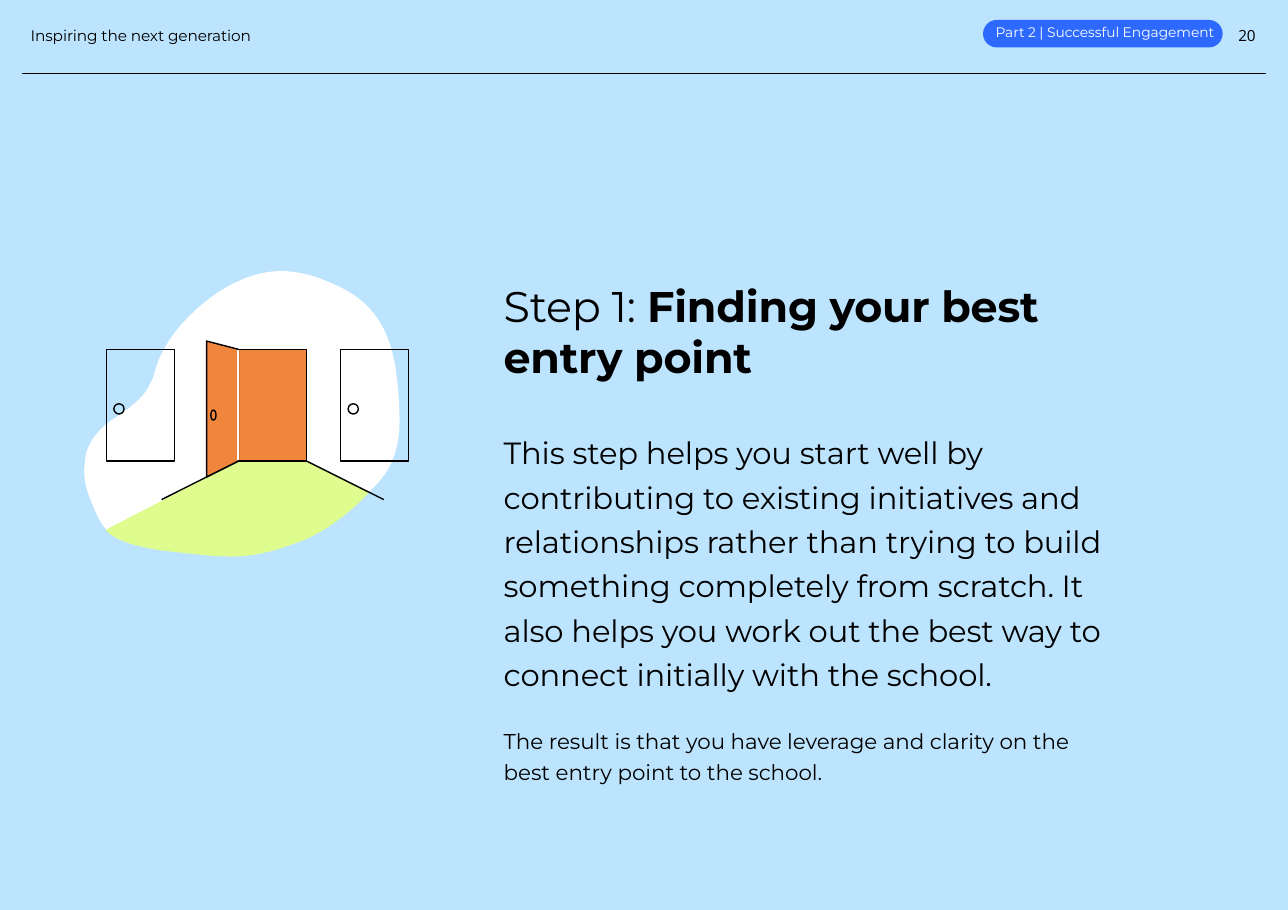
from lxml import etree
from pptx import Presentation
from pptx.dml.color import RGBColor
from pptx.enum.shapes import MSO_CONNECTOR, MSO_SHAPE
from pptx.oxml.ns import qn
from pptx.util import Pt

STRAIGHT = MSO_CONNECTOR.STRAIGHT
RECT, OVAL, PILL = MSO_SHAPE.RECTANGLE, MSO_SHAPE.OVAL, MSO_SHAPE.ROUNDED_RECTANGLE

SKY = RGBColor(0xBC, 0xE4, 0xFE)
WHITE = RGBColor(0xFF, 0xFF, 0xFF)
LIME = RGBColor(0xDF, 0xFC, 0x8E)
ORANGE = RGBColor(0xEF, 0x86, 0x3B)
BLUE = RGBColor(0x2D, 0x69, 0xFF)
BLACK = RGBColor(0, 0, 0)

PAGE_W, PAGE_H = 841.68, 594.72
STROKE = 0.9
CURVE_STEPS = 12
DOOR_TOP, DOOR_W, DOOR_H = 228.3, 44.5, 73
DOOR_BOTTOM = DOOR_TOP + DOOR_H
LEFT_DOOR, OPEN_DOOR, RIGHT_DOOR = 69.5, 155.8, 222.6

# Each curve is two control points and an end point
BLOB_START = (56.2, 306.7)
BLOB_CURVES = [
    ((53.3, 294.5), (61.9, 283), (71.3, 275.8)),
    ((81.4, 268.6), (92.9, 262.1), (97.9, 251.3)),
    ((100.8, 246.2), (101.5, 241.2), (103.7, 235.4)),
    ((107.3, 226.8), (113, 218.2), (119.5, 211)),
    ((136.1, 193), (158.4, 177.8), (182.9, 177.1)),
    ((195.1, 177.1), (207.4, 180.7), (218.2, 185.8)),
    ((228.2, 190.1), (236.9, 195.8), (243.4, 203.8)),
    ((256.3, 218.9), (259.2, 239.8), (260.6, 259.9)),
    ((261.4, 273.6), (262.1, 288), (256.3, 301)),
    ((251.3, 313.9), (239.8, 323.3), (228.2, 331.9)),
    ((213.1, 343.4), (197.3, 354.2), (178.6, 357.1)),
    ((160.6, 360), (142.6, 355), (125.3, 355.7)),
    ((115.9, 355.7), (106.6, 357.1), (97.2, 357.1)),
    ((88.6, 356.4), (78.5, 354.2), (72, 348.5)),
    ((66.2, 343.4), (63.4, 337), (60.5, 329.8)),
    ((56.9, 321.8), (54, 312.5), (55.4, 303.1)),
]
FLOOR_START = (69.1, 346.3)
FLOOR_CURVES = [
    ((69.1, 346.3), (75.6, 357.1), (113.8, 360.7)),
    ((151.9, 365), (163.4, 366.5), (197.3, 353.5)),
    ((222.5, 343.4), (241.2, 321.8), (241.2, 321.8)),
]


def curve_points(start, curves):
    """Sample a chain of cubic Bezier curves."""
    points = [start]
    for c1, c2, end in curves:
        p0 = points[-1]
        for i in range(1, CURVE_STEPS + 1):
            t = i / CURVE_STEPS
            u = 1 - t
            points.append(tuple(
                u**3 * a + 3 * u * u * t * b + 3 * u * t * t * c + t**3 * d
                for a, b, c, d in zip(p0, c1, c2, end)))
    return points


def paint(sp, fill, line):
    sp.shadow.inherit = False
    if fill is None:
        sp.fill.background()
    else:
        sp.fill.solid()
        sp.fill.fore_color.rgb = fill
    if line is None:
        sp.line.fill.background()
    else:
        sp.line.color.rgb = line
        sp.line.width = Pt(STROKE)


def add_outline(s, points, fill, line=None):
    emu = [(Pt(x), Pt(y)) for x, y in points]
    builder = s.shapes.build_freeform(*emu[0])
    builder.add_line_segments(emu[1:], close=True)
    paint(builder.convert_to_shape(), fill, line)


def add_preset(s, kind, x, y, w, h, fill=None, line=None):
    sp = s.shapes.add_shape(kind, Pt(x), Pt(y), Pt(w), Pt(h))
    paint(sp, fill, line)
    return sp


def add_line(s, x1, y1, x2, y2, color=BLACK, width=STROKE):
    cn = s.shapes.add_connector(STRAIGHT, Pt(x1), Pt(y1), Pt(x2), Pt(y2))
    cn.line.color.rgb = color
    cn.line.width = Pt(width)
    etree.SubElement(cn._element.spPr, qn("a:effectLst"))


def add_text_box(s, x, y, w, h):
    tf = s.shapes.add_textbox(Pt(x), Pt(y), Pt(w), Pt(h)).text_frame
    tf.word_wrap = True
    tf.margin_left = tf.margin_right = tf.margin_top = tf.margin_bottom = 0
    return tf


def set_spacing(p, line, before=0):
    p.line_spacing = Pt(line)
    p.space_before = Pt(before)


def add_run(p, text, size, color=BLACK, font="Montserrat", bold=False, spacing=-5):
    r = p.add_run()
    r.text = text
    r.font.name = font
    r.font.size = Pt(size)
    r.font.bold = bold
    r.font.color.rgb = color
    r._r.get_or_add_rPr().set("spc", str(spacing))


def add_header(s):
    pill = add_preset(s, PILL, 642.4, 13, 156.6, 18, BLUE)
    pill.adjustments[0] = 0.5
    add_line(s, 14.4, 47.9, 827.3, 47.9)

    p = add_text_box(s, 650.6, 13.7, 146, 13).paragraphs[0]
    set_spacing(p, 12.6)
    add_run(p, "Part 2 | Successful Engagement", 9, WHITE, spacing=-3)
    p = add_text_box(s, 809.3, 15.1, 14, 14).paragraphs[0]
    set_spacing(p, 14)
    add_run(p, "20", 10, font="Open Sans")
    p = add_text_box(s, 20, 15.1, 173, 14).paragraphs[0]
    set_spacing(p, 14)
    add_run(p, "Inspiring the next generation", 10)


def add_closed_door(s, x):
    add_preset(s, RECT, x, DOOR_TOP, DOOR_W, DOOR_H, line=BLACK)
    add_preset(s, OVAL, x + 4.9, 263.9, 6.7, 6.7, line=BLACK)


def add_doors(s):
    open_right = OPEN_DOOR + DOOR_W
    add_outline(s, curve_points(BLOB_START, BLOB_CURVES), WHITE)
    floor = curve_points(FLOOR_START, FLOOR_CURVES)
    add_outline(s, floor + [(open_right, DOOR_BOTTOM), (OPEN_DOOR, DOOR_BOTTOM)], LIME)

    # Floor edges
    add_line(s, 105.6, 326.5, OPEN_DOOR, DOOR_BOTTOM)
    add_line(s, open_right, DOOR_BOTTOM, 250.8, 326.5)

    # Open door with its leaf and handle
    add_preset(s, RECT, OPEN_DOOR, DOOR_TOP, DOOR_W, DOOR_H, ORANGE, BLACK)
    add_outline(s, [(135, 222.9), (135, 311.7), (OPEN_DOOR, DOOR_BOTTOM),
                    (OPEN_DOOR, DOOR_TOP)], ORANGE, BLACK)
    add_line(s, OPEN_DOOR, DOOR_TOP + 0.5, OPEN_DOOR, DOOR_BOTTOM - 0.5, WHITE, 1.2)
    add_preset(s, OVAL, 137.8, 268, 3.4, 6.6, line=BLACK)

    for x in (LEFT_DOOR, RIGHT_DOOR):
        add_closed_door(s, x)


def add_step_text(s):
    tf = add_text_box(s, 329.2, 182.5, 393.8, 321.8)
    p = tf.paragraphs[0]
    set_spacing(p, 33.6)
    add_run(p, "Step 1: ", 28, spacing=-10)
    add_run(p, "Finding your best entry point", 28, bold=True, spacing=-14)
    p = tf.add_paragraph()
    set_spacing(p, 29, before=29)
    add_run(p, "This step helps you start well by contributing to existing initiatives "
               "and relationships rather than trying to build something completely from "
               "scratch. It also helps you work out the best way to connect initially "
               "with the school.", 20, spacing=-10)
    p = tf.add_paragraph()
    set_spacing(p, 20, before=20)
    add_run(p, "The result is that you have leverage and clarity on the best entry "
               "point to the school.", 14)


def main():
    prs = Presentation()
    prs.slide_width, prs.slide_height = Pt(PAGE_W), Pt(PAGE_H)
    s = prs.slides.add_slide(prs.slide_layouts[6])
    # Full-page colour panel
    add_outline(s, [(0, 0), (0, PAGE_H), (PAGE_W, PAGE_H), (PAGE_W, 0)], SKY)
    add_doors(s)
    add_header(s)
    add_step_text(s)
    prs.save("out.pptx")


if __name__ == "__main__":
    main()
